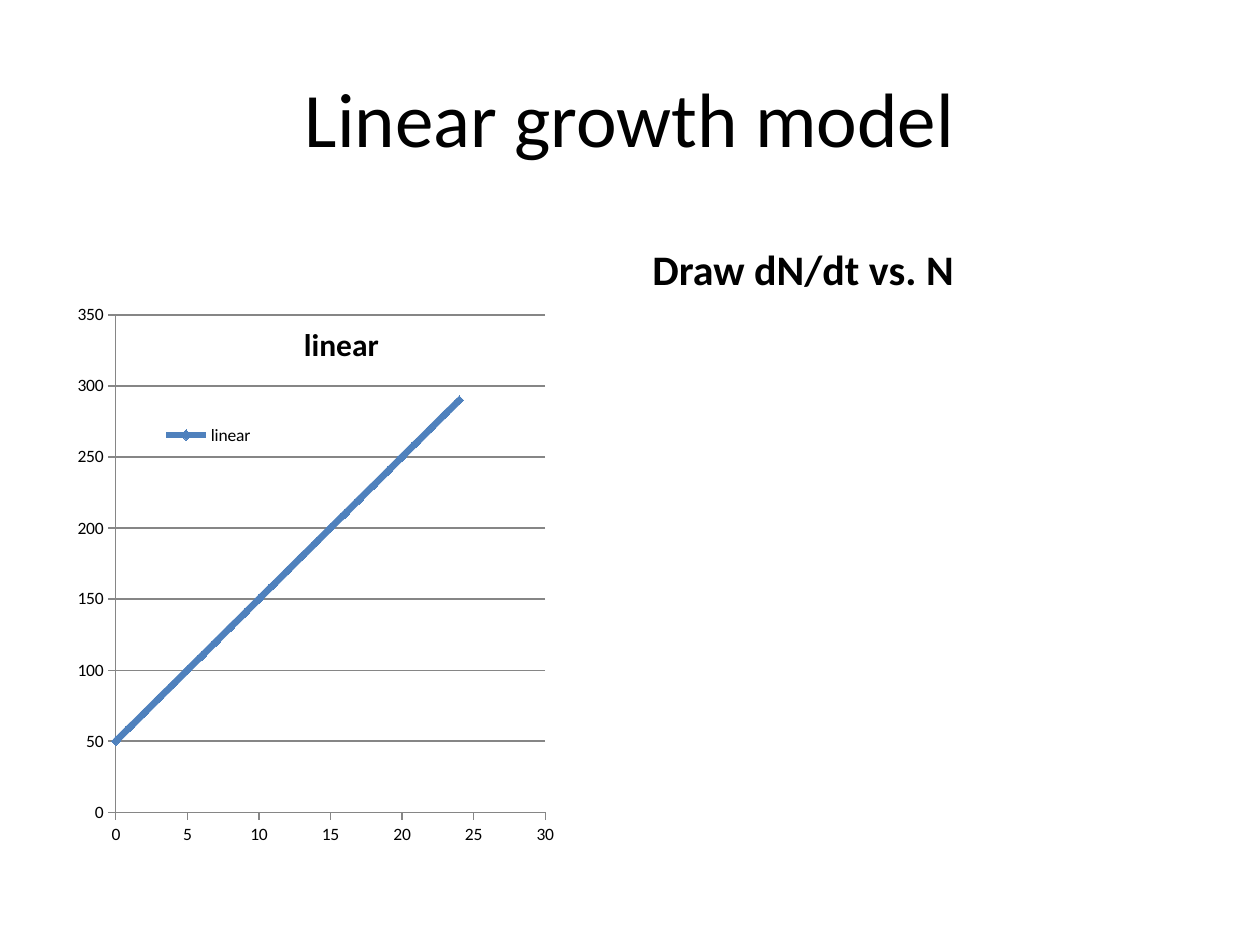
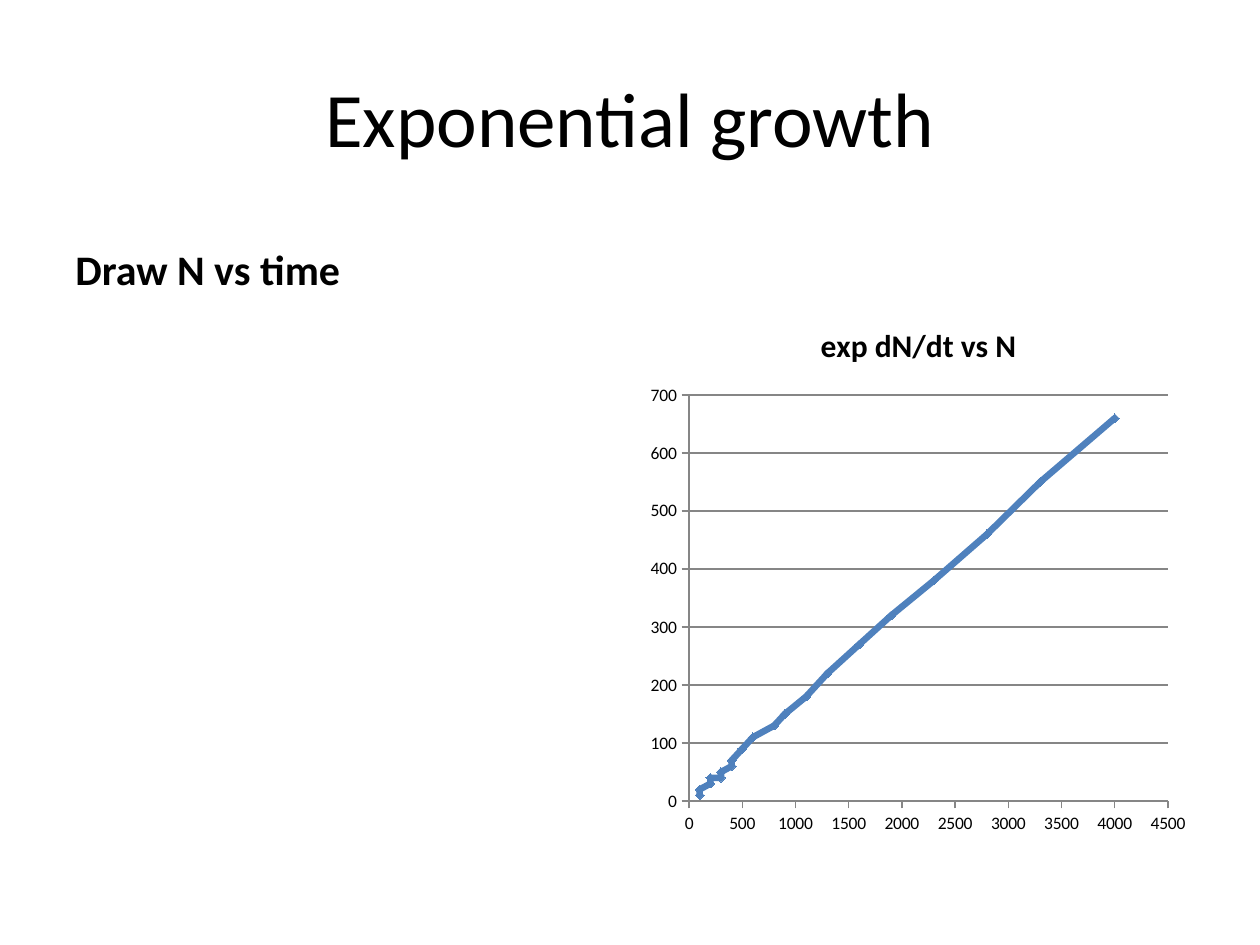
from lxml import etree
from pptx import Presentation
from pptx.chart.data import XyChartData
from pptx.dml.color import RGBColor
from pptx.enum.chart import XL_CHART_TYPE, XL_LEGEND_POSITION, XL_MARKER_STYLE, XL_TICK_MARK
from pptx.enum.text import MSO_ANCHOR, PP_ALIGN
from pptx.oxml.ns import qn
from pptx.util import Inches, Pt

# Content
START = 50
STEPS = range(25)
RATE = 1.2
sizes = [START * RATE ** t for t in STEPS]
gains = [None] + [round(n - prev, -1) for prev, n in zip(sizes, sizes[1:])]

SLIDES = [
    dict(title="Linear growth model", prompt="Draw dN/dt vs. N",
         chart_side="left", chart_title="linear", series="linear",
         points=[(t, START + 10 * t) for t in STEPS],
         x_axis=(30, 5), y_axis=(350, 50),
         plot=(0.095, 0.028, 0.771, 0.919), legend=(0.136, 0.21, 0.25, 0.08)),
    dict(title="Exponential growth", prompt="Draw N vs time",
         chart_side="right", chart_title="exp dN/dt vs N", series="Series 1",
         points=[(int(round(n, -2)), gain if gain is None else int(gain))
                 for n, gain in zip(sizes, gains)],
         x_axis=(4500, 500), y_axis=(700, 100),
         plot=(0.088, 0.175, 0.86, 0.746), legend=None),
]

# Shared style
FONT = "Calibri"
BLACK = RGBColor(0x00, 0x00, 0x00)
BLUE = RGBColor(0x4F, 0x81, 0xBD)
GREY = RGBColor(0x86, 0x86, 0x86)
COLUMN_X = {"left": 0.5, "right": 5.08}
COLUMN_W = 4.42
OTHER_SIDE = {"left": "right", "right": "left"}


def style_font(font, size, bold=False):
    font.name, font.size, font.bold = FONT, Pt(size), bold
    font.color.rgb = BLACK


def add_text(s, text, box, size, anchor, align, bold=False):
    tf = s.shapes.add_textbox(*map(Inches, box)).text_frame
    tf.word_wrap = True
    tf.vertical_anchor = anchor
    p = tf.paragraphs[0]
    p.text = text
    p.alignment = align
    style_font(p.runs[0].font, size, bold)


def place(part, index, box, inner=False):
    """Give a chart part a fixed place, in fractions of the chart."""
    for old in part.findall(qn("c:layout")):
        part.remove(old)
    layout = etree.Element(qn("c:layout"))
    manual = etree.SubElement(layout, qn("c:manualLayout"))
    settings = [("layoutTarget", "inner")] if inner else []
    settings += [("xMode", "edge"), ("yMode", "edge")]
    settings += zip("xywh", box)
    for tag, value in settings:
        etree.SubElement(manual, qn("c:" + tag)).set("val", str(value))
    part.insert(index, layout)


def style_axis(axis, scale, grid):
    axis.minimum_scale = 0
    axis.maximum_scale, axis.major_unit = scale
    axis.major_tick_mark = XL_TICK_MARK.OUTSIDE
    axis.minor_tick_mark = XL_TICK_MARK.NONE
    axis.has_major_gridlines = grid
    lines = [axis.format.line]
    if grid:
        lines.append(axis.major_gridlines.format.line)
    for line in lines:
        line.color.rgb = GREY
        line.width = Pt(0.7)


def add_growth_chart(s, c):
    data = XyChartData(number_format="General")
    series_data = data.add_series(c["series"])
    for x, y in c["points"]:
        series_data.add_data_point(x, y)
    box = (COLUMN_X[c["chart_side"]], 2.38, COLUMN_W, 4.32)
    chart = s.shapes.add_chart(XL_CHART_TYPE.XY_SCATTER_SMOOTH,
                               *map(Inches, box), data).chart
    style_font(chart.font, 10)

    # Title, plot and axes
    tf = chart.chart_title.text_frame
    tf.text = c["chart_title"]
    style_font(tf.paragraphs[0].runs[0].font, 18, True)
    plot_area = chart._chartSpace.chart.plotArea
    place(plot_area, 0, c["plot"], inner=True)
    style_axis(chart.category_axis, c["x_axis"], False)
    style_axis(chart.value_axis, c["y_axis"], True)

    # A missing value leaves no point
    for pt in list(plot_area.iter(qn("c:pt"))):
        if pt.findtext(qn("c:v")) in ("None", ""):
            pt.getparent().remove(pt)

    # Curve
    chart.plots[0].vary_by_categories = False
    series = chart.plots[0].series[0]
    series.smooth = True
    series.format.line.color.rgb = BLUE
    series.format.line.width = Pt(3.75)
    series.marker.style = XL_MARKER_STYLE.DIAMOND
    series.marker.size = 5
    series.marker.format.fill.solid()
    series.marker.format.fill.fore_color.rgb = BLUE
    series.marker.format.line.color.rgb = BLUE

    # Legend
    chart.has_legend = c["legend"] is not None
    if chart.has_legend:
        chart.legend.position = XL_LEGEND_POSITION.RIGHT
        chart.legend.include_in_layout = False
        style_font(chart.legend.font, 10)
        legend = plot_area.getparent().find(qn("c:legend"))
        place(legend, 1, c["legend"])


def main():
    prs = Presentation()
    prs.slide_width, prs.slide_height = Inches(10), Inches(7.5)
    for c in SLIDES:
        s = prs.slides.add_slide(prs.slide_layouts[6])
        add_text(s, c["title"], (0.5, 0.3, 9, 1.25), 44,
                 MSO_ANCHOR.MIDDLE, PP_ALIGN.CENTER)
        prompt_x = COLUMN_X[OTHER_SIDE[c["chart_side"]]]
        add_text(s, c["prompt"], (prompt_x, 1.68, COLUMN_W, 0.7), 24,
                 MSO_ANCHOR.BOTTOM, PP_ALIGN.LEFT, True)
        add_growth_chart(s, c)
    prs.save("out.pptx")


if __name__ == "__main__":
    main()
